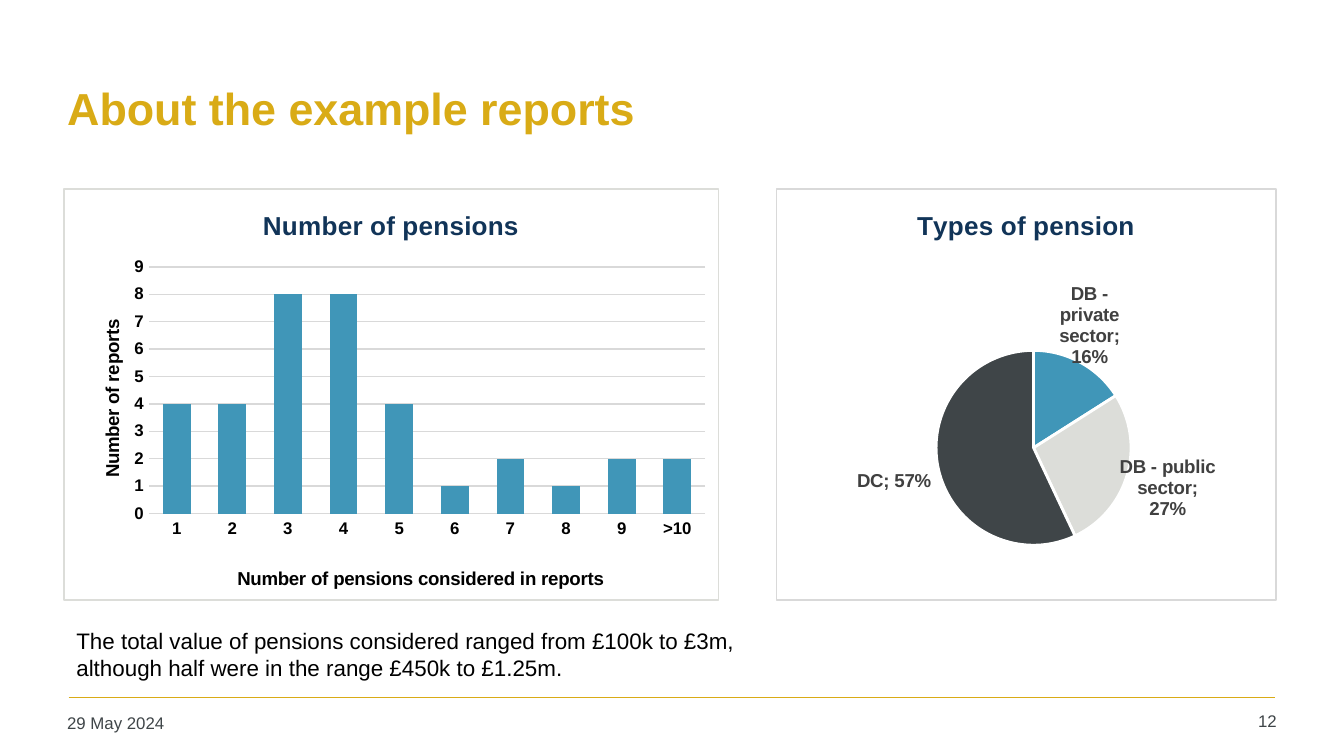
from copy import deepcopy

from lxml.etree import SubElement
from pptx import Presentation
from pptx.chart.data import CategoryChartData
from pptx.dml.color import RGBColor
from pptx.enum.chart import XL_CHART_TYPE, XL_LABEL_POSITION, XL_TICK_MARK
from pptx.enum.shapes import MSO_CONNECTOR
from pptx.enum.text import MSO_ANCHOR, PP_ALIGN
from pptx.oxml import parse_xml
from pptx.oxml.ns import nsdecls, qn
from pptx.util import Inches, Pt

COLORS = {
    "gold": "D9AB16", "navy": "113458", "blue": "4096B8", "pale": "DCDDD9",
    "slate": "3F4548", "label": "404040", "grid": "D9D9D9",
    "black": "000000", "white": "FFFFFF",
}
FONT = "Arial"
SMALL_INSETS = (0.07, 0.04)
EDGES = {"xMode": "edge", "yMode": "edge"}


def rgb(name):
    return RGBColor.from_string(COLORS[name])


def manual_layout(**settings):
    layout = parse_xml(f'<c:layout {nsdecls("c")}><c:manualLayout/></c:layout>')
    for tag, value in settings.items():
        SubElement(layout[0], qn(f"c:{tag}")).set("val", str(value))
    return layout


class ReportSlide:
    def __init__(self, presentation):
        self.slide = presentation.slides.add_slide(presentation.slide_layouts[5])

    def style(self, font, size, color, bold=False):
        font.name, font.size, font.bold = FONT, Pt(size), bold
        font.color.rgb = rgb(color)

    def fill_text(self, shape, text, size, color, bold=False, align=PP_ALIGN.LEFT,
                  anchor=MSO_ANCHOR.TOP, insets=SMALL_INSETS):
        frame = shape.text_frame
        frame.word_wrap = True
        frame.vertical_anchor = anchor
        frame.margin_left = frame.margin_right = Inches(insets[0])
        frame.margin_top = frame.margin_bottom = Inches(insets[1])
        frame.text = text
        paragraph = frame.paragraphs[0]
        paragraph.alignment = align
        self.style(paragraph.font, size, color, bold)

    def title(self, text, left, top, width, height):
        heading = self.slide.shapes.title
        heading.left, heading.top = Inches(left), Inches(top)
        heading.width, heading.height = Inches(width), Inches(height)
        self.fill_text(heading, text, 24, "gold", True, anchor=MSO_ANCHOR.MIDDLE)

    def text(self, text, left, top, width, height, size, color, **options):
        box = self.slide.shapes.add_textbox(
            Inches(left), Inches(top), Inches(width), Inches(height))
        self.fill_text(box, text, size, color, **options)

    def rule(self, left, right, y):
        line = self.slide.shapes.add_connector(
            MSO_CONNECTOR.STRAIGHT, Inches(left), Inches(y), Inches(right), Inches(y))
        line.line.color.rgb = rgb("gold")
        line.line.width = Pt(1)
        SubElement(line.element.spPr, qn("a:effectLst"))

    def chart(self, kind, heading, categories, values, box, plot, border,
              number_format="General"):
        """Add a framed chart; plot is the inner plot area in chart fractions."""
        data = CategoryChartData(number_format=number_format)
        data.categories = categories
        data.add_series("Series 1", values)
        chart = self.slide.shapes.add_chart(
            kind, *(Inches(length) for length in box), data).chart
        self.style(chart.font, 10, "black", True)
        chart.has_legend = False
        chart.has_title = True
        self.caption(chart.chart_title, heading, 14, "navy")
        chart.chart_title.include_in_layout = False
        body = chart.element.find(qn("c:chart"))
        self.frame(body, border)
        area = body.find(qn("c:plotArea"))
        for automatic in area.findall(qn("c:layout")):
            area.remove(automatic)
        area.insert(0, manual_layout(
            layoutTarget="inner", **EDGES, **dict(zip("xywh", plot))))
        return chart

    def caption(self, title, text, size, color):
        title.text_frame.text = text
        self.style(title.text_frame.paragraphs[0].font, size, color, True)

    def frame(self, body, border):
        body.addnext(parse_xml(
            f'<c:spPr {nsdecls("c", "a")}>'
            f'<a:solidFill><a:srgbClr val="{COLORS["white"]}"/></a:solidFill>'
            f'<a:ln w="{Pt(0.75)}"><a:solidFill><a:srgbClr val="{COLORS[border]}"/>'
            '</a:solidFill></a:ln></c:spPr>'))

    def axis(self, axis, title, left, top):
        axis.has_title = True
        self.caption(axis.axis_title, title, 10, "black")
        caption = axis.axis_title.element
        for automatic in caption.findall(qn("c:layout")):
            caption.remove(automatic)
        caption.find(qn("c:tx")).addnext(manual_layout(**EDGES, x=left, y=top))
        axis.major_tick_mark = axis.minor_tick_mark = XL_TICK_MARK.NONE
        self.style(axis.tick_labels.font, 9, "black", True)

    def column_chart(self, heading, x_title, y_title, categories, values, box, plot):
        chart = self.chart(XL_CHART_TYPE.COLUMN_CLUSTERED, heading, categories,
                           values, box, plot, "pale")
        columns = chart.plots[0]
        columns.gap_width, columns.overlap = 100, -27
        columns.vary_by_categories = False
        bars = columns.series[0].format.fill
        bars.solid()
        bars.fore_color.rgb = rgb("blue")
        self.axis(chart.category_axis, x_title, 0.26, 0.91)
        self.axis(chart.value_axis, y_title, 0.05, 0.31)
        chart.value_axis.minimum_scale = 0
        chart.value_axis.maximum_scale = 9
        chart.value_axis.major_unit = 1
        chart.value_axis.format.line.fill.background()
        for line in (chart.category_axis.format.line,
                     chart.value_axis.major_gridlines.format.line):
            line.color.rgb = rgb("grid")
            line.width = Pt(0.75)

    def pie_chart(self, heading, shares, label_shifts, box, plot):
        """Add a pie from a list of (category, share, color)."""
        categories, values, colors = zip(*shares)
        chart = self.chart(XL_CHART_TYPE.PIE, heading, categories, values, box,
                           plot, "grid", "0%")
        pie = chart.plots[0]
        pie.vary_by_categories = True
        for index, color in enumerate(colors):
            sector = pie.series[0].points[index].format
            sector.fill.solid()
            sector.fill.fore_color.rgb = rgb(color)
            sector.line.color.rgb = rgb("white")
            sector.line.width = Pt(1.5)
        labels = pie.series[0].data_labels
        labels.show_value = labels.show_category_name = True
        labels.show_percentage = labels.show_legend_key = False
        labels.number_format, labels.number_format_is_linked = "0%", False
        labels.position = XL_LABEL_POSITION.OUTSIDE_END
        self.style(labels.font, 10, "label", True)
        self.shift_labels(next(chart.element.iter(qn("c:dLbls"))), label_shifts)

    def shift_labels(self, labels, shifts):
        """Separate label parts by semicolons and move the first labels."""
        flags = labels.findall(qn("c:showPercent")) + labels.findall(
            qn("c:showBubbleSize"))
        flags[-1].addnext(
            parse_xml(f'<c:separator {nsdecls("c")}>; </c:separator>'))
        shared = [part for part in labels if part.tag != qn("c:showLeaderLines")]
        for index, (x, y) in enumerate(shifts):
            label = parse_xml(f'<c:dLbl {nsdecls("c")}><c:idx val="{index}"/></c:dLbl>')
            label.append(manual_layout(x=x, y=y))
            label.extend(deepcopy(part) for part in shared)
            labels.insert(index, label)


def main():
    presentation = Presentation()
    presentation.slide_width = Inches(10)
    presentation.slide_height = Inches(10 * 9 / 16)
    page = ReportSlide(presentation)
    page.rule(0.51, 9.49, 5.19)
    page.title("About the example reports", 0.43, 0.33, 9.07, 0.94)
    page.text("29 May 2024", 0.43, 5.26, 2.2, 0.27, 9, "slate")
    page.text("12", 8.86, 5.25, 0.71, 0.28, 9, "slate", align=PP_ALIGN.RIGHT)
    page.pie_chart(
        "Types of pension",
        [("DB - private sector", 0.16, "blue"),
         ("DB - public sector", 0.27, "pale"),
         ("DC", 0.57, "slate")],
        label_shifts=[(-0.05, 0.03), (-0.03, -0.05)],
        box=(5.77, 1.4, 3.73, 3.07), plot=(0.32, 0.39, 0.39, 0.48))
    page.column_chart(
        "Number of pensions", "Number of pensions considered in reports",
        "Number of reports",
        [str(count) for count in range(1, 10)] + [">10"],
        [4, 4, 8, 8, 4, 1, 2, 1, 2, 2],
        box=(0.47, 1.4, 4.88, 3.07), plot=(0.13, 0.19, 0.85, 0.6))
    page.text(
        "The total value of pensions considered ranged from £100k to £3m, "
        "although half were in the range £450k to £1.25m.",
        0.47, 4.62, 5.3, 0.5, 12, "black", insets=(0.1, 0.05))
    presentation.save("out.pptx")


if __name__ == "__main__":
    main()
